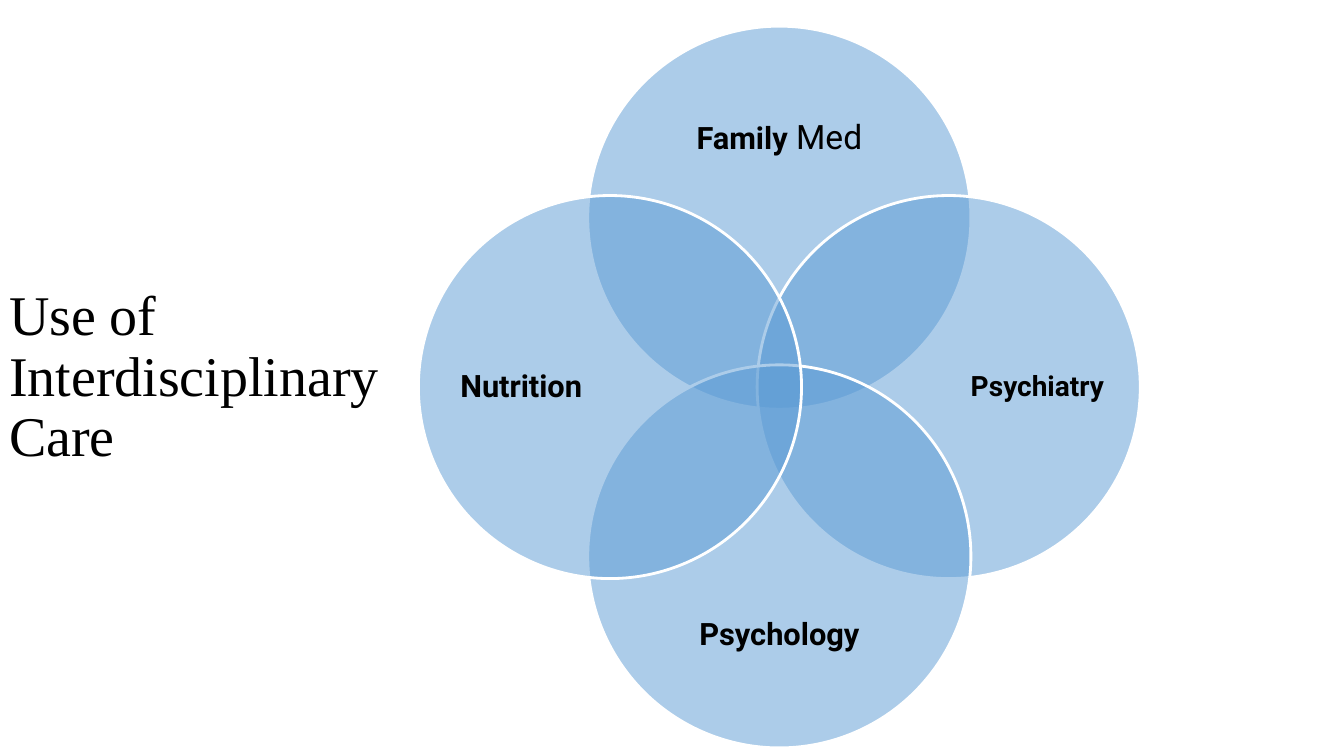
from lxml import etree
from pptx import Presentation
from pptx.dml.color import RGBColor
from pptx.enum.shapes import MSO_SHAPE
from pptx.enum.text import MSO_ANCHOR, PP_ALIGN
from pptx.oxml.ns import qn
from pptx.util import Inches, Pt

OVAL = MSO_SHAPE.OVAL
MIDDLE = MSO_ANCHOR.MIDDLE
LEFT, CENTER = PP_ALIGN.LEFT, PP_ALIGN.CENTER


def color(value):
    return RGBColor.from_string(value)


def write(shape, margin, alignment, font_name, runs):
    frame = shape.text_frame
    frame.word_wrap = True
    frame.vertical_anchor = MIDDLE
    frame.margin_left = frame.margin_right = Inches(margin)
    frame.margin_top = frame.margin_bottom = Inches(margin)
    paragraph = frame.paragraphs[0]
    paragraph.alignment = alignment
    paragraph.line_spacing = 0.9
    for text, size, bold in runs:
        run = paragraph.add_run()
        run.text = text
        run.font.name = font_name
        run.font.size = Pt(size)
        run.font.bold = bold
        run.font.color.rgb = color("000000")


presentation = Presentation()
presentation.slide_width = Inches(13.33)
presentation.slide_height = Inches(7.5)
slide = presentation.slides.add_slide(presentation.slide_layouts[5])

# Title
title = slide.shapes.title
title.left, title.top = Inches(0.04), Inches(0.01)
title.width, title.height = Inches(4), Inches(7.48)
write(title, 0.05, LEFT, "Times New Roman",
      [("Use of Interdisciplinary Care", 40, False)])

# Four overlapping circles around a common centre, clockwise from the top
center_x, center_y = 7.73, 3.84
diameter, offset = 3.8, 1.68
label_long, label_short, label_offset = 2.92, 1.21, 2.465
side_label_width, side_label_offset = 1.46, 2.56
disciplines = [
    (0, -1, [("Family", 22, True), (" Med", 24, False)]),
    (1, 0, [("Psychiatry", 20, True)]),
    (0, 1, [("Psychology", 22, True)]),
    (-1, 0, [("Nutrition", 22, True)]),
]
for step_x, step_y, runs in disciplines:
    circle = slide.shapes.add_shape(
        OVAL,
        Inches(center_x + step_x * offset - diameter / 2),
        Inches(center_y + step_y * offset - diameter / 2),
        Inches(diameter), Inches(diameter))
    circle.shadow.inherit = False
    circle.fill.solid()
    circle.fill.fore_color.rgb = color("5B9BD5")
    fill_color = circle.fill._xPr.find(qn("a:solidFill"))[0]
    etree.SubElement(fill_color, qn("a:alpha")).set("val", "50000")
    circle.line.color.rgb = color("FFFFFF")
    circle.line.width = Pt(2)

    # Label towards the outer edge of the circle
    width, height = (side_label_width, label_long) if step_x else (label_long, label_short)
    label = slide.shapes.add_textbox(
        Inches(center_x + step_x * side_label_offset - width / 2),
        Inches(center_y + step_y * label_offset - height / 2),
        Inches(width), Inches(height))
    write(label, 0, CENTER, "Roboto", runs)

presentation.save("out.pptx")
